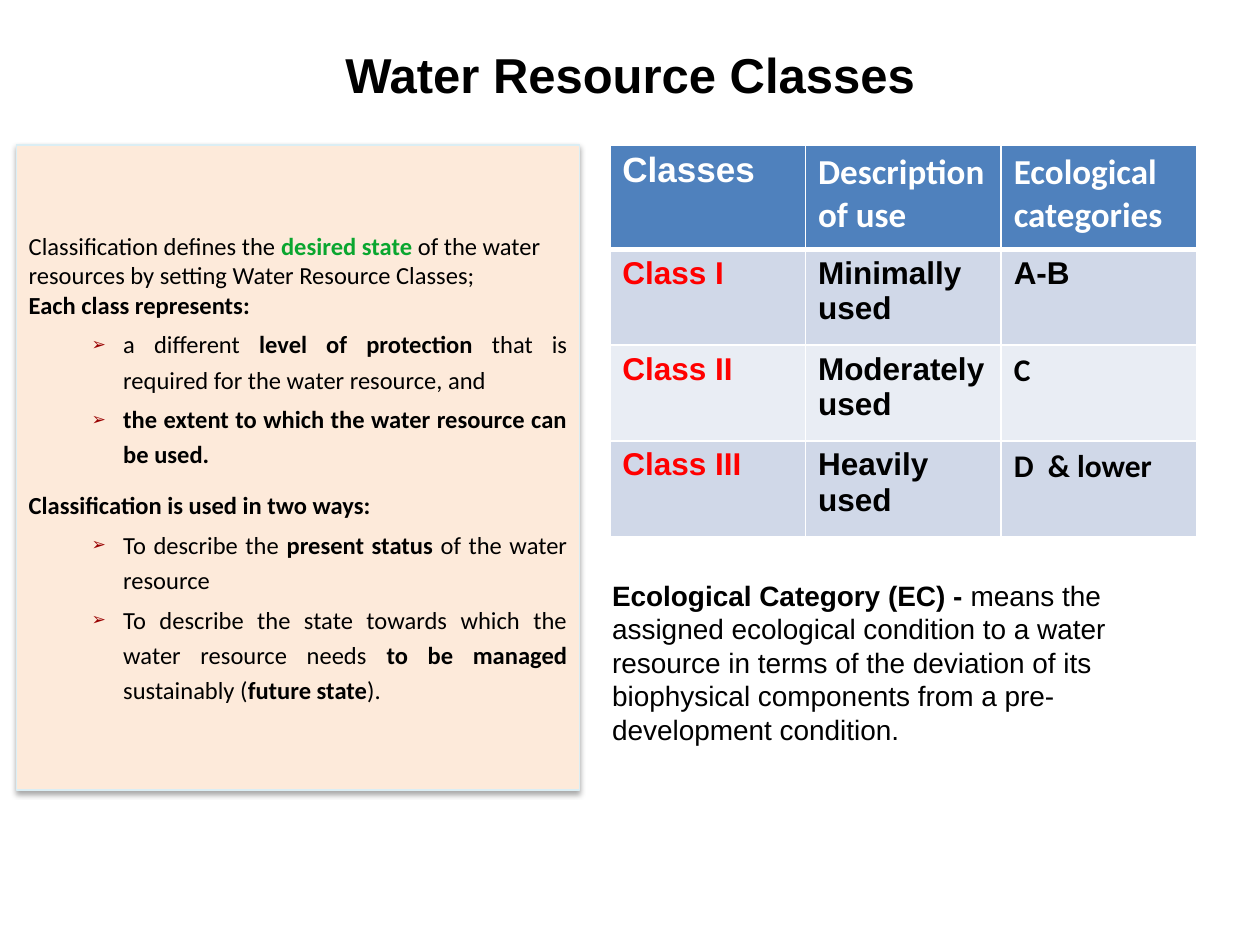
from dataclasses import dataclass, field
from typing import Any

from lxml.etree import SubElement
from pptx import Presentation
from pptx.dml.color import RGBColor
from pptx.enum.shapes import MSO_SHAPE
from pptx.enum.text import MSO_ANCHOR as Anchor, MSO_AUTO_SIZE as AutoSize, PP_ALIGN as Align
from pptx.oxml.ns import qn
from pptx.util import Emu, Inches, Pt

COLORS = {
    "black": "000000", "white": "FFFFFF", "red": "FF0000", "green": "0AA62F",
    "bullet": "990000", "panel": "FDEADA", "edge": "DBEEF4",
    "header": "4F81BD", "band": "D0D8E8", "light": "E9EDF4",
}
WIDTH, HEIGHT = Inches(10), Inches(7.5)
COLUMNS, ROWS = 100, 75


@dataclass(frozen=True)
class Span:
    text: str
    bold: bool = False
    color: str = "black"


@dataclass(frozen=True)
class Para:
    spans: list[Span]
    bulleted: bool = False
    format: dict[str, Any] = field(default_factory=dict)


@dataclass(frozen=True)
class Entry:
    text: str
    font: str = "Arial"
    color: str = "black"


def rgb(name: str) -> RGBColor:
    return RGBColor.from_string(COLORS[name])


def across(columns: float) -> Emu:
    return Emu(round(WIDTH * columns / COLUMNS))


def down(rows: float) -> Emu:
    return Emu(round(HEIGHT * rows / ROWS))


def area(left: float, top: float, width: float, height: float) -> tuple[Emu, ...]:
    return across(left), down(top), across(width), down(height)


def apply(target: Any, values: dict[str, Any]) -> None:
    for name, value in values.items():
        setattr(target, name, value)


def add_element(parent: Any, tag: str, **attributes: str) -> Any:
    return SubElement(parent, qn(tag), attributes)


def add_color(parent: Any, name: str) -> Any:
    return add_element(parent, "a:srgbClr", val=COLORS[name])


def add_bullet(para: Any) -> None:
    """Give the paragraph a hanging arrowhead bullet."""
    props = para._p.get_or_add_pPr()
    props.set("marL", str(Inches(0.75)))
    props.set("indent", str(Inches(-0.25)))
    add_color(add_element(props, "a:buClr"), "bullet")
    add_element(props, "a:buSzPct", val="70000")
    add_element(props, "a:buFont", typeface="Wingdings")
    props[-1].set("typeface", "Arial")
    add_element(props, "a:buChar", char="➢")


def write(frame: Any, paras: list[Para], font: str, size: float) -> None:
    for index, item in enumerate(paras):
        para = frame.paragraphs[0] if index == 0 else frame.add_paragraph()
        if item.bulleted:
            add_bullet(para)
        apply(para, {"alignment": Align.LEFT, **item.format})
        for span in item.spans:
            run = para.add_run()
            run.text = span.text
            apply(run.font, {"name": font, "size": Pt(size), "bold": span.bold})
            run.font.color.rgb = rgb(span.color)


def add_shadow(shape: Any) -> None:
    shape.shadow.inherit = False
    effects = shape._element.spPr.find(qn("a:effectLst"))
    shadow = add_element(effects, "a:outerShdw", blurRad=str(Pt(3.1)), dist=str(Pt(1.8)),
                         dir="5400000", rotWithShape="0")
    add_element(add_color(shadow, "black"), "a:alpha", val="35000")


def set_borders(cell: Any, bottom: float, top: float) -> None:
    props = cell._tc.get_or_add_tcPr()
    for index, (side, width) in enumerate({"L": 1, "R": 1, "T": top, "B": bottom}.items()):
        line = props.makeelement(qn(f"a:ln{side}"), {"w": str(Pt(width))})
        add_color(add_element(line, "a:solidFill"), "white")
        props.insert(index, line)


def add_classes_table(slide: Any, entries: list[list[Entry]]) -> None:
    row_heights = [8.3, 7.6, 7.6, 7.6]
    column_width = 15.53
    box = area(48.4, 11.5, column_width * len(entries[0]), sum(row_heights))
    table = slide.shapes.add_table(len(entries), len(entries[0]), *box).table
    for column in table.columns:
        column.width = across(column_width)
    for r, (row, height) in enumerate(zip(entries, row_heights)):
        table.rows[r].height = down(height)
        fill = "header" if r == 0 else "band" if r % 2 else "light"
        for c, entry in enumerate(row):
            cell = table.cell(r, c)
            cell.fill.solid()
            cell.fill.fore_color.rgb = rgb(fill)
            set_borders(cell, bottom=3 if r == 0 else 1, top=3 if r == 1 else 1)
            write(cell.text_frame, [Para([Span(entry.text, True, entry.color)])],
                  entry.font, 20 if r == 0 else 18)


def add_panel(slide: Any, paras: list[Para]) -> None:
    panel = slide.shapes.add_shape(MSO_SHAPE.RECTANGLE, *area(1.3, 11.5, 44.7, 51.2))
    panel.fill.solid()
    panel.fill.fore_color.rgb = rgb("panel")
    panel.line.color.rgb = rgb("edge")
    panel.line.width = Pt(0.75)
    add_shadow(panel)
    apply(panel.text_frame, {"word_wrap": True, "vertical_anchor": Anchor.MIDDLE})
    write(panel.text_frame, paras, "Calibri", 14)


def add_title(slide: Any, text: str) -> None:
    title = slide.shapes.title
    apply(title, dict(zip(("left", "top", "width", "height"), area(5, 3, 90, 12.5))))
    title.text_frame.vertical_anchor = Anchor.TOP
    heading = Para([Span(text, True)], format={"alignment": Align.CENTER})
    write(title.text_frame, [heading], "Arial", 28)


def add_definition(slide: Any, spans: list[Span]) -> None:
    box = slide.shapes.add_textbox(*area(47.6, 45.4, 47, 14.5))
    apply(box.text_frame, {"word_wrap": True, "auto_size": AutoSize.SHAPE_TO_FIT_TEXT})
    write(box.text_frame, [Para(spans)], "Arial", 16)


def point(*spans: Span, after: float = 0) -> Para:
    return Para(list(spans), True, {
        "level": 1, "alignment": Align.JUSTIFY, "line_spacing": Pt(20),
        "space_before": Pt(2.8), "space_after": Pt(after),
    })


CLASSES = [
    [Entry("Classes", color="white"), Entry("Description of use", "Calibri", "white"),
     Entry("Ecological categories", "Calibri", "white")],
    [Entry("Class I", color="red"), Entry("Minimally used"), Entry("A-B")],
    [Entry("Class II", color="red"), Entry("Moderately used"), Entry("C", "Calibri")],
    [Entry("Class III", color="red"), Entry("Heavily used"), Entry("D  & lower", "Calibri")],
]
CLASSIFICATION = [
    Para([Span("Classification defines the "), Span("desired state ", True, "green"),
          Span("of the water resources by setting Water Resource Classes;")]),
    Para([Span("Each class represents:", True)]),
    point(Span("a different "), Span("level of protection ", True),
          Span("that is required for the water resource, and")),
    point(Span("the extent to which the water resource can be used.", True), after=12),
    Para([Span("Classification is used in two ways:", True)]),
    point(Span("To describe the "), Span("present status ", True), Span("of the water resource")),
    point(Span("To describe the state towards which the water resource needs "),
          Span("to be managed ", True), Span("sustainably ("),
          Span("future state", True), Span(").")),
]
DEFINITION = [
    Span("Ecological Category (EC) - ", True),
    Span("means the assigned ecological condition to a water resource in terms of the deviation "
         "of its biophysical components from a pre-development condition."),
]


def main() -> None:
    deck = Presentation()
    apply(deck, {"slide_width": WIDTH, "slide_height": HEIGHT})
    slide = deck.slides.add_slide(deck.slide_layouts[5])
    add_title(slide, "Water Resource Classes")
    add_classes_table(slide, CLASSES)
    add_definition(slide, DEFINITION)
    add_panel(slide, CLASSIFICATION)
    deck.save("out.pptx")


if __name__ == "__main__":
    main()
